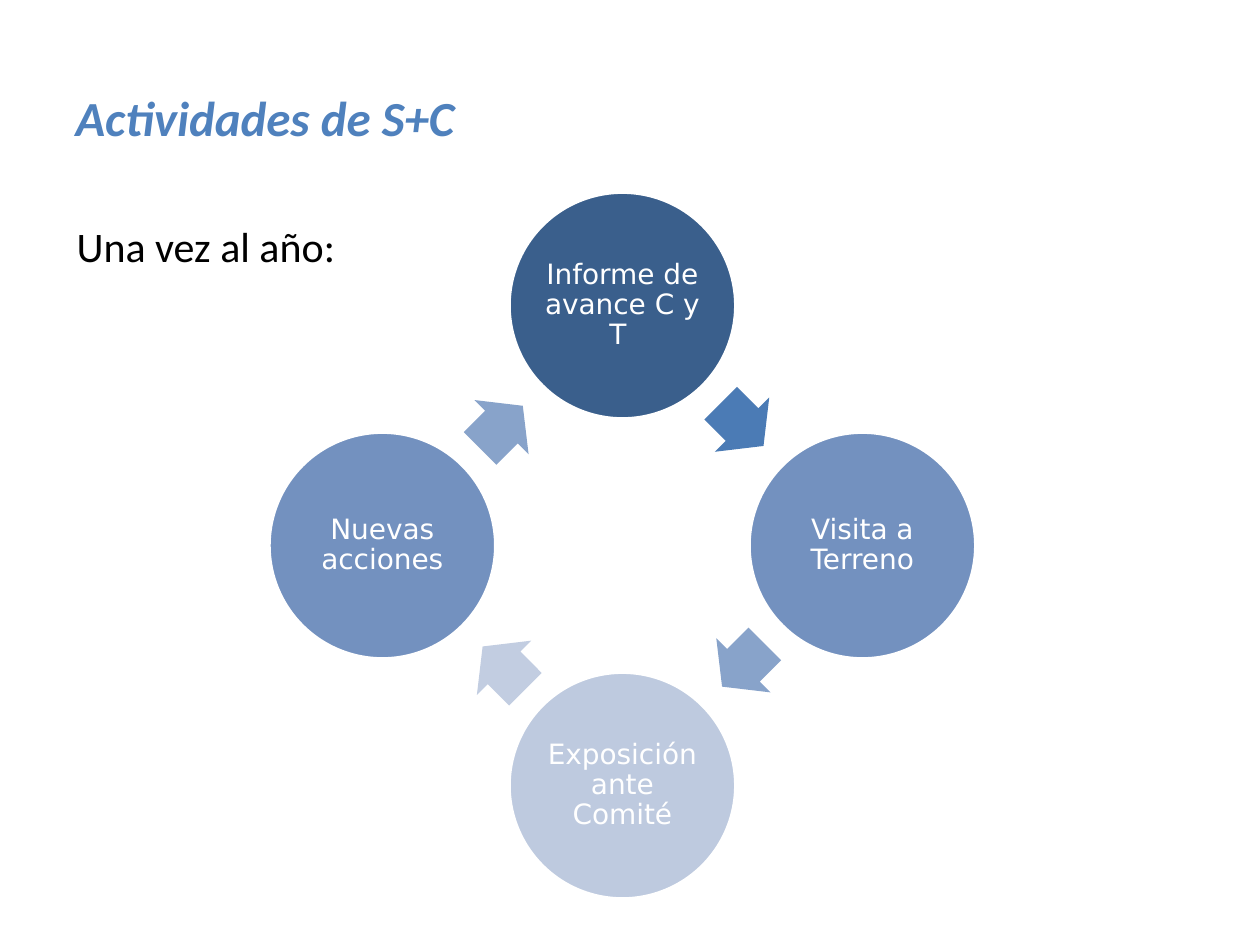
"""Build the slide showing the yearly cycle of S+C activities."""
from math import cos, radians, sin

from pptx import Presentation
from pptx.dml.color import RGBColor
from pptx.enum.shapes import MSO_SHAPE as SHAPE
from pptx.enum.text import MSO_ANCHOR as ANCHOR, PP_ALIGN as ALIGN
from pptx.util import Inches, Pt

WHITE = RGBColor(0xFF, 0xFF, 0xFF)
BLACK = RGBColor(0x00, 0x00, 0x00)
TITLE_BLUE = RGBColor(0x4F, 0x81, 0xBD)
NAVY = RGBColor(0x3A, 0x5F, 0x8C)
STEEL = RGBColor(0x73, 0x91, 0xBF)
PALE = RGBColor(0xBE, 0xCA, 0xDF)
ARROW_STRONG = RGBColor(0x4B, 0x7B, 0xB5)
ARROW_MID = RGBColor(0x88, 0xA3, 0xCA)
ARROW_PALE = RGBColor(0xC2, 0xCD, 0xE1)


def write_text(sp, text, size, color, font="Calibri", bold=False, italic=False,
               align=ALIGN.LEFT, anchor=ANCHOR.TOP, inset=None, spacing=None):
    tf = sp.text_frame
    tf.word_wrap = True
    tf.vertical_anchor = anchor
    if inset is not None:
        tf.margin_left = tf.margin_right = Inches(inset)
        tf.margin_top = tf.margin_bottom = Inches(inset)
    p = tf.paragraphs[0]
    p.alignment = align
    if spacing:
        p.line_spacing = spacing
    r = p.add_run()
    r.text = text
    r.font.name = font
    r.font.size = Pt(size)
    r.font.bold = bold
    r.font.italic = italic
    r.font.color.rgb = color


def add_filled(s, kind, cx, cy, w, h, color):
    sp = s.shapes.add_shape(kind, Inches(cx - w / 2), Inches(cy - h / 2),
                            Inches(w), Inches(h))
    sp.shadow.inherit = False
    sp.fill.solid()
    sp.fill.fore_color.rgb = color
    sp.line.fill.background()
    return sp


prs = Presentation()
prs.slide_width, prs.slide_height = Inches(10), Inches(7.5)
s = prs.slides.add_slide(prs.slide_layouts[5])

title = s.shapes.title
title.left, title.top = Inches(0.5), Inches(0.3)
title.width, title.height = Inches(7.81), Inches(1.25)
write_text(title, "Actividades de S+C", 28, TITLE_BLUE, bold=True, italic=True,
           anchor=ANCHOR.MIDDLE)

body = s.shapes.add_textbox(Inches(0.51), Inches(1.7), Inches(9), Inches(4.95))
write_text(body, "Una vez al año:", 24, BLACK)

CENTER_X, CENTER_Y = 4.94, 4.33
RADIUS, DIAMETER = 1.905, 1.8
ARROW_W, ARROW_H = 0.48, 0.61
steps = [
    ("Informe de avance C y T ", NAVY, ARROW_STRONG, 5.89, 3.37),
    ("Visita a Terreno", STEEL, ARROW_MID, 5.9, 5.28),
    ("Exposición ante Comité", PALE, ARROW_PALE, 4, 5.3),
    ("Nuevas acciones", STEEL, ARROW_MID, 3.98, 3.39),
]
for i, (text, color, arrow_color, arrow_x, arrow_y) in enumerate(steps):
    angle = radians(90 * i)
    circle = add_filled(s, SHAPE.OVAL, CENTER_X + RADIUS * sin(angle),
                        CENTER_Y - RADIUS * cos(angle), DIAMETER, DIAMETER, color)
    circle.line.color.rgb = WHITE
    circle.line.width = Pt(2)
    write_text(circle, text, 16, WHITE, font="DejaVu Sans", align=ALIGN.CENTER,
               anchor=ANCHOR.MIDDLE, inset=0.02, spacing=0.9)

    arrow = add_filled(s, SHAPE.RIGHT_ARROW, arrow_x, arrow_y, ARROW_W, ARROW_H,
                       arrow_color)
    arrow.adjustments[0], arrow.adjustments[1] = 0.6, 0.5
    arrow.rotation = 45 + 90 * i

prs.save("out.pptx")
